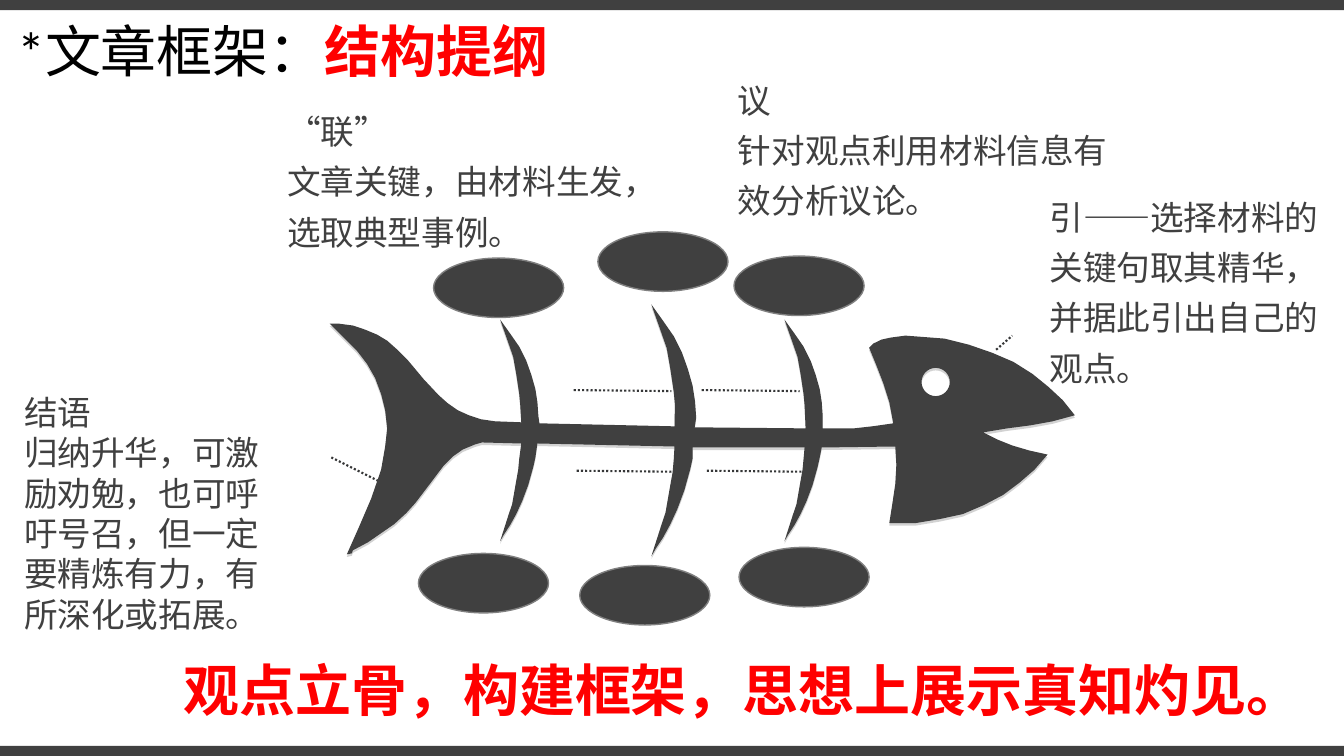
from dataclasses import dataclass
from math import cos, pi, sin

from lxml.etree import SubElement
from pptx import Presentation
from pptx.dml.color import RGBColor
from pptx.enum.dml import MSO_LINE_DASH_STYLE as Dash
from pptx.enum.shapes import MSO_CONNECTOR as Connector, MSO_SHAPE as Preset
from pptx.enum.text import MSO_ANCHOR as Anchor, MSO_AUTO_SIZE as AutoSize, PP_ALIGN as Align
from pptx.oxml.ns import qn
from pptx.slide import Slide
from pptx.util import Inches, Pt

DARK = RGBColor(0x40, 0x40, 0x40)
DOTTED = RGBColor(0x35, 0x36, 0x37)
GRAY = RGBColor(0x80, 0x80, 0x80)
BLACK = RGBColor(0, 0, 0)
RED = RGBColor(0xFF, 0, 0)
CJK_FONT = "Noto Sans CJK SC"
LATIN_FONT = "Calibri"
TITLE_ONLY = 5

Points = list[tuple[float, float]]


@dataclass
class Note:
    left: float
    top: float
    width: float
    height: float
    lines: list[str]
    spacing: float = 1.25
    size: int = 24
    font: str = CJK_FONT
    color: RGBColor = DARK
    bold: bool = False


@dataclass
class Rib:
    x: float
    top: float
    bottom: float
    scale: float = 1


NOTES = [
    Note(10.31, 1.8, 3.02, 2.12, ["引——选择材料的关键句取其精华，并据此引出自己的观点。"]),
    Note(0.14, 3.84, 2.66, 2.52,
         ["结语", "归纳升华，可激励劝勉，也可呼吁号召，但一定要精炼有力，有所深化或拓展。"], 1.0),
    Note(7.22, 0.64, 3.87, 1.61, ["议", "针对观点利用材料信息有效分析议论。"]),
    Note(2.75, 0.95, 3.66, 1.61, ["“联”", "文章关键，由材料生发，选取典型事例。"]),
    Note(1.72, 6.45, 11.72, 0.77, ["观点立骨，构建框架，思想上展示真知灼见。"],
         1.0, 40, LATIN_FONT, RED, True),
]
BAR_TOPS = [0, 7.4]
BONE_ENDS = [(4.3, 2.56), (5.93, 2.3), (7.28, 2.54), (4.15, 5.49), (5.75, 5.61), (7.33, 5.43)]
DOTTED_LINES = [
    (9.88, 3.47, 10.04, 3.33), (3.79, 4.79, 3.27, 4.53),
    (5.72, 4.67, 6.69, 4.68), (7.01, 4.67, 7.98, 4.68),
    (5.69, 3.87, 6.66, 3.88), (6.96, 3.87, 7.93, 3.88),
]

# Rib edges are offsets from the rib's tip; the fish outline runs counterclockwise.
UPPER_RIB = [
    (0.38, 0.96), (0.37, 0.82), (0.35, 0.69), (0.31, 0.55), (0.26, 0.41), (0.19, 0.27),
    (0.1, 0.14), (0, 0), (0.06, 0.17), (0.13, 0.37), (0.16, 0.54), (0.19, 0.74), (0.2, 0.85),
]
LOWER_RIB = [
    (0.19, -0.82), (0.18, -0.71), (0.16, -0.6), (0.12, -0.37), (0.08, -0.25), (0, 0),
    (0.04, -0.07), (0.1, -0.16), (0.16, -0.27), (0.22, -0.4), (0.28, -0.56),
    (0.33, -0.74), (0.35, -0.83),
]
REAR_RIB = Rib(4.96, 3.17, 5.37)
MIDDLE_RIB = Rib(6.46, 3.02, 5.52, 1.17)
FRONT_RIB = Rib(7.78, 3.17, 5.37)
UPPER_HEAD = [
    (10.66, 4.12), (10.54, 3.97), (10.4, 3.84), (10.24, 3.71), (10.05, 3.59), (9.84, 3.5),
    (9.61, 3.42), (9.37, 3.36), (9.11, 3.34), (8.98, 3.33), (8.83, 3.35), (8.74, 3.37),
    (8.66, 3.41), (8.62, 3.45), (8.69, 3.62), (8.76, 3.8), (8.82, 3.99), (8.86, 4.2),
    (8.65, 4.23), (8.47, 4.25),
]
TAIL = [
    (4.91, 4.18), (4.77, 4.16), (4.65, 4.12), (4.54, 4.07), (4.44, 4.0), (4.35, 3.92),
    (4.2, 3.76), (4.05, 3.58), (3.93, 3.46), (3.84, 3.38), (3.74, 3.32), (3.62, 3.27),
    (3.5, 3.23), (3.35, 3.21), (3.27, 3.21), (3.43, 3.37), (3.54, 3.48), (3.64, 3.61),
    (3.72, 3.75), (3.78, 3.91), (3.82, 4.07), (3.84, 4.25), (3.82, 4.43), (3.78, 4.66),
    (3.68, 4.95), (3.56, 5.23), (3.44, 5.5), (3.49, 5.49), (3.5, 5.46), (3.65, 5.38),
    (3.78, 5.29), (3.91, 5.2), (4.03, 5.09), (4.12, 4.99), (4.28, 4.78), (4.4, 4.62),
    (4.49, 4.53), (4.59, 4.46), (4.71, 4.41), (4.78, 4.39),
]
LOWER_HEAD = [
    (8.88, 4.43), (8.89, 4.61), (8.88, 4.8), (8.85, 5.0), (8.82, 5.19), (9.08, 5.19),
    (9.32, 5.15), (9.55, 5.1), (9.76, 5.01), (9.95, 4.91), (10.11, 4.79), (10.26, 4.66),
    (10.39, 4.51), (10.21, 4.47), (10.04, 4.42), (9.89, 4.36), (9.75, 4.29), (9.99, 4.25),
    (10.22, 4.22), (10.44, 4.18),
]


def rib_edge(rib: Rib, tip: float, offsets: Points) -> Points:
    return [(rib.x + dx * rib.scale, tip + dy * rib.scale) for dx, dy in offsets]


def fish_outline() -> Points:
    return [
        *UPPER_HEAD,
        (8.16, 4.25), *rib_edge(FRONT_RIB, FRONT_RIB.top, UPPER_RIB), (7.99, 4.25),
        (6.89, 4.24), *rib_edge(MIDDLE_RIB, MIDDLE_RIB.top, UPPER_RIB), (6.69, 4.23),
        (5.35, 4.2), *rib_edge(REAR_RIB, REAR_RIB.top, UPPER_RIB), (5.17, 4.19),
        *TAIL,
        (5.17, 4.4), *rib_edge(REAR_RIB, REAR_RIB.bottom, LOWER_RIB), (5.33, 4.4),
        (6.69, 4.43), *rib_edge(MIDDLE_RIB, MIDDLE_RIB.bottom, LOWER_RIB), (6.87, 4.44),
        (7.98, 4.44), *rib_edge(FRONT_RIB, FRONT_RIB.bottom, LOWER_RIB), (8.15, 4.44),
        *LOWER_HEAD,
    ]


def eye_outline(steps: int = 32) -> Points:
    angles = [2 * pi * step / steps for step in range(steps)]
    return [(9.28 + 0.14 * cos(angle), 3.79 + 0.14 * sin(angle)) for angle in angles]


def add_fish(page: Slide) -> None:
    body, eye = ([(Inches(x), Inches(y)) for x, y in outline]
                 for outline in (fish_outline(), eye_outline()))
    builder = page.shapes.build_freeform(*body[0])
    builder.add_line_segments(body[1:], close=True)
    builder.move_to(*eye[0])
    builder.add_line_segments(eye[1:], close=True)
    fish = builder.convert_to_shape()
    fish.fill.solid()
    fish.fill.fore_color.rgb = DARK
    fish.line.fill.background()
    fish.shadow.inherit = False
    effects = fish._element.spPr.find(qn("a:effectLst"))
    shadow = SubElement(effects, qn("a:outerShdw"), dist=str(Pt(1.8)), dir="5400000")
    tint = SubElement(shadow, qn("a:srgbClr"), val=str(GRAY))
    SubElement(tint, qn("a:alpha"), val="35000")


def add_solid(page: Slide, preset: Preset, left: float, top: float,
              width: float, height: float, edge: RGBColor | None = None) -> None:
    shape = page.shapes.add_shape(preset, Inches(left), Inches(top), Inches(width), Inches(height))
    shape.shadow.inherit = False
    shape.fill.solid()
    shape.fill.fore_color.rgb = DARK
    if edge is None:
        shape.line.fill.background()
    else:
        shape.line.color.rgb = edge
        shape.line.width = Pt(1)


def add_dotted_line(page: Slide, *ends: float) -> None:
    line = page.shapes.add_connector(Connector.STRAIGHT, *map(Inches, ends))
    line.line.color.rgb = DOTTED
    line.line.width = Pt(1.5)
    line.line.dash_style = Dash.ROUND_DOT
    SubElement(line._element.spPr, qn("a:effectLst"))


def set_font(para, name: str, size: int) -> None:
    """Set the Latin font and size, with the CJK font for East Asian text."""
    para.font.name = name
    para.font.size = Pt(size)
    SubElement(para._p.pPr.find(qn("a:defRPr")), qn("a:ea"), typeface=CJK_FONT)


def add_note(page: Slide, note: Note) -> None:
    box = page.shapes.add_textbox(Inches(note.left), Inches(note.top),
                                  Inches(note.width), Inches(note.height))
    frame = box.text_frame
    frame.word_wrap = True
    frame.auto_size = AutoSize.SHAPE_TO_FIT_TEXT
    frame.text = "\n".join(note.lines)
    for para in frame.paragraphs:
        para.line_spacing = note.spacing
        para.font.color.rgb = note.color
        para.font.bold = note.bold
        set_font(para, note.font, note.size)


def fill_title(page: Slide) -> None:
    title = page.shapes.title
    title.left, title.top, title.width, title.height = map(Inches, (0.07, 0.11, 10.24, 0.77))
    title.text_frame.auto_size = AutoSize.NONE
    title.text_frame.vertical_anchor = Anchor.TOP
    para = title.text_frame.paragraphs[0]
    para.alignment = Align.LEFT
    set_font(para, LATIN_FONT, 40)
    for text, color, bold in [("*文章框架：", BLACK, False), ("结构提纲", RED, True)]:
        span = para.add_run()
        span.text = text
        span.font.color.rgb = color
        span.font.bold = bold


def main() -> None:
    deck = Presentation()
    deck.slide_width, deck.slide_height = Inches(13.33), Inches(7.5)
    page = deck.slides.add_slide(deck.slide_layouts[TITLE_ONLY])
    fill_title(page)
    for top in BAR_TOPS:
        add_solid(page, Preset.RECTANGLE, 0, top, 13.33, 0.1)
    for ends in DOTTED_LINES:
        add_dotted_line(page, *ends)
    add_fish(page)
    for left, top in BONE_ENDS:
        add_solid(page, Preset.OVAL, left, top, 1.29, 0.59, GRAY)
    for note in NOTES:
        add_note(page, note)
    deck.save("out.pptx")


if __name__ == "__main__":
    main()
